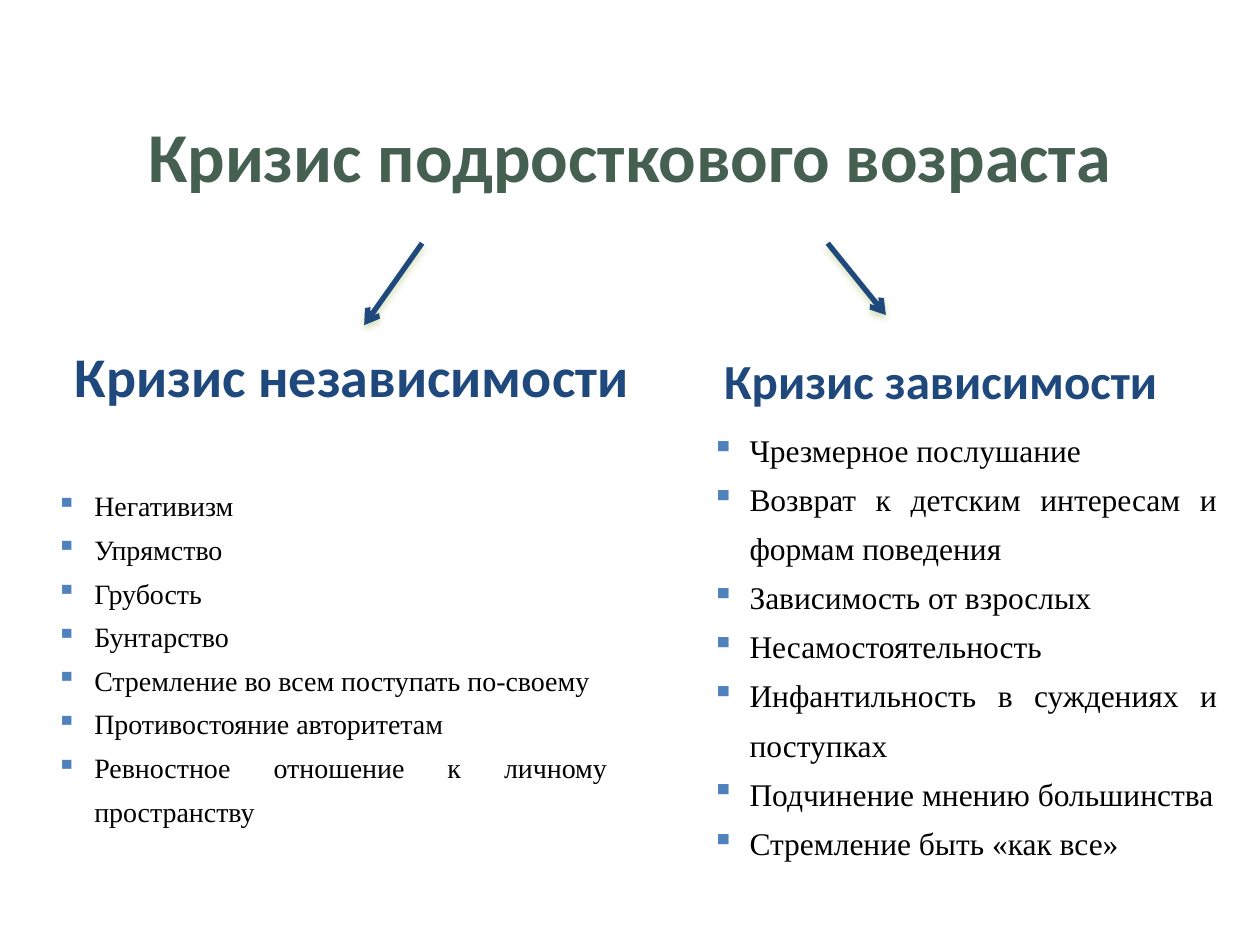
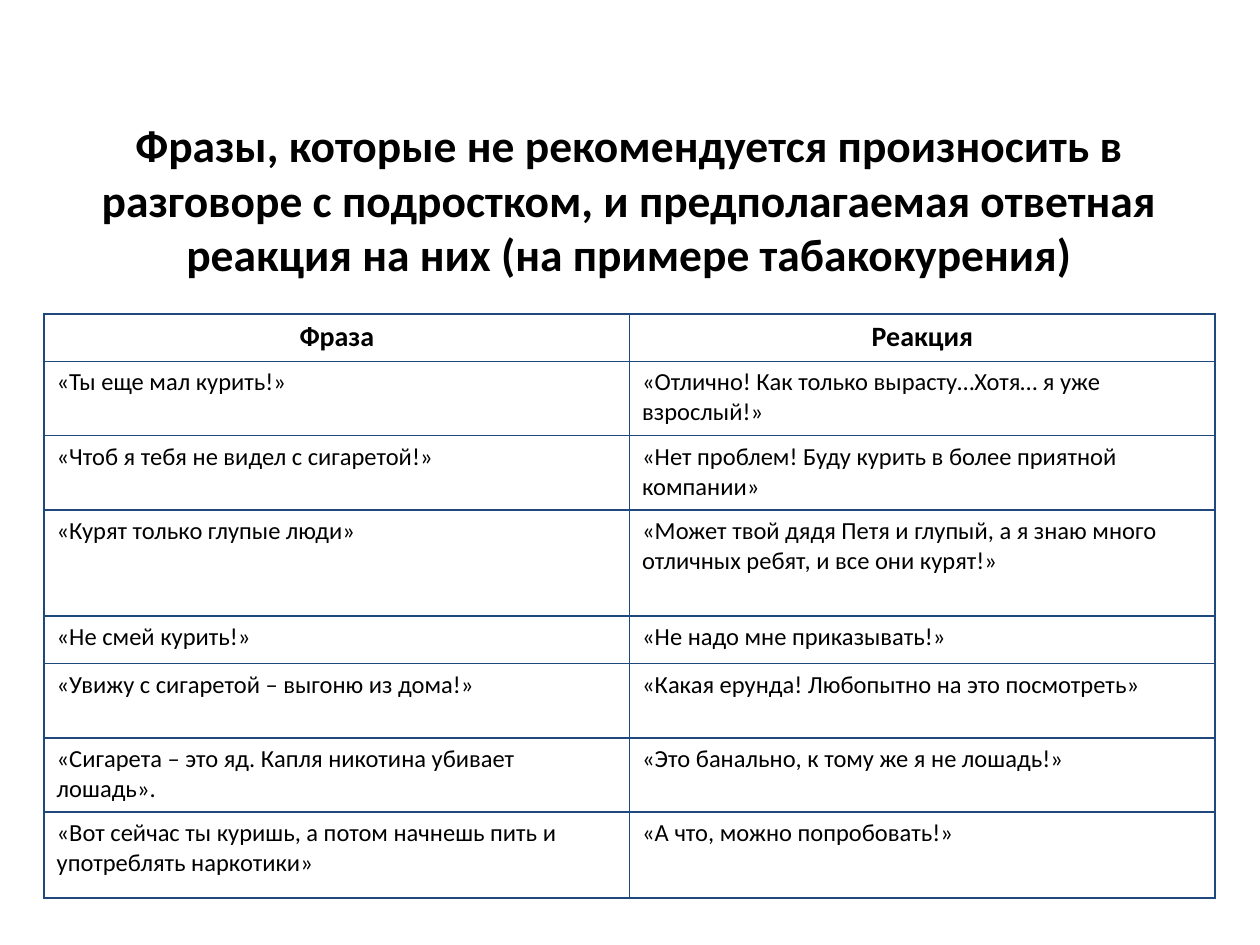
from dataclasses import dataclass

import pptx
import pptx.dml.color
import pptx.enum.shapes
import pptx.enum.text
import pptx.oxml.ns
import pptx.slide
import pptx.table
import pptx.text.text
import pptx.util
from lxml import etree

Pt = pptx.util.Pt
Align = pptx.enum.text.PP_ALIGN
Anchor = pptx.enum.text.MSO_ANCHOR
qn = pptx.oxml.ns.qn


@dataclass(frozen=True)
class Theme:
    navy: str = "1F497D"
    green: str = "455F51"
    black: str = "000000"
    bullet: str = "4F81BD"
    glow: str = "9BBB59"
    heading_font: str = "Calibri"
    list_font: str = "Times New Roman"
    crisis_title: float = 40
    phrases_title: float = 26
    table_header: float = 16
    table_body: float = 14
    arrow_width: float = 3
    border_width: float = 1


THEME = Theme()
MARGIN = 25.2
CONTENT_WIDTH = 669.2
LIST_INDENT = 21.6
LIST_SPACING = 1.3


@dataclass(frozen=True)
class Box:
    left: float
    top: float
    width: float
    height: float


@dataclass(frozen=True)
class Heading:
    text: str
    box: Box
    size: float
    color: str
    anchor: Anchor = Anchor.TOP
    space_before: float = 0
    indent: float = 0


@dataclass(frozen=True)
class Arrow:
    start: tuple[float, float]
    end: tuple[float, float]


@dataclass(frozen=True)
class SignList:
    box: Box
    size: float
    signs: tuple[str, ...]


@dataclass(frozen=True)
class Exchange:
    phrase: str
    reaction: str
    height: float


CRISIS_HEADINGS = (
    Heading("Кризис подросткового возраста", Box(MARGIN, 54.7, CONTENT_WIDTH, 67),
            THEME.crisis_title, THEME.green, Anchor.MIDDLE),
    Heading("Кризис независимости", Box(33.8, 191.5, 334.8, 53.3), 32, THEME.navy,
            space_before=2),
    Heading("Кризис зависимости", Box(365.8, 196.6, 334.8, 53.3), 28, THEME.navy,
            space_before=3, indent=8.6),
)
CRISIS_ARROWS = (
    Arrow((241.2, 139), (208.1, 185.8)),
    Arrow((473, 139), (506.2, 180)),
)
CRISIS_SIGNS = (
    SignList(Box(MARGIN, 270, 329, 221), 16, (
        "Негативизм",
        "Упрямство",
        "Грубость",
        "Бунтарство",
        "Стремление во всем поступать по-своему",
        "Противостояние авторитетам",
        "Ревностное отношение к личному пространству",
    )),
    SignList(Box(399.6, 236.2, 303.1, 267.1), 18, (
        "Чрезмерное послушание",
        "Возврат к детским интересам и формам поведения",
        "Зависимость от взрослых",
        "Несамостоятельность",
        "Инфантильность в суждениях и поступках",
        "Подчинение мнению большинства",
        "Стремление быть «как все»",
    )),
)

PHRASES_HEADING = Heading(
    "Фразы, которые не рекомендуется произносить в разговоре с подростком, "
    "и предполагаемая ответная реакция на них (на примере табакокурения)",
    Box(MARGIN, 60.5, CONTENT_WIDTH, 106.6), THEME.phrases_title, THEME.black, Anchor.MIDDLE)
ONE_LINE, TWO_LINES = 27.2, 42.5
EXCHANGES = (
    Exchange("Фраза", "Реакция", ONE_LINE),
    Exchange("«Ты еще мал курить!»",
             "«Отлично! Как только вырасту…Хотя… я уже взрослый!»", TWO_LINES),
    Exchange("«Чтоб я тебя не видел с сигаретой!»",
             "«Нет проблем! Буду курить в более приятной компании»", TWO_LINES),
    Exchange("«Курят только глупые люди»",
             "«Может твой дядя Петя и глупый, а я знаю много отличных ребят, "
             "и все они курят!»", 60.5),
    Exchange("«Не смей курить!»", "«Не надо мне приказывать!»", ONE_LINE),
    Exchange("«Увижу с сигаретой – выгоню из дома!»",
             "«Какая ерунда! Любопытно на это посмотреть»", TWO_LINES),
    Exchange("«Сигарета – это яд. Капля никотина убивает лошадь».",
             "«Это банально, к тому же я не лошадь!»", TWO_LINES),
    Exchange("«Вот сейчас ты куришь, а потом начнешь пить и употреблять наркотики»",
             "«А что, можно попробовать!»", 49),
)


def rgb(color: str) -> pptx.dml.color.RGBColor:
    return pptx.dml.color.RGBColor.from_string(color)


def add_node(parent: etree.ElementBase, tag: str, **attributes: str) -> etree.ElementBase:
    return etree.SubElement(parent, qn(tag), attributes)


def style(paragraph: pptx.text.text._Paragraph, font: str, size: float, color: str,
          align: Align, bold: bool = False) -> None:
    paragraph.alignment = align
    paragraph.font.name = font
    paragraph.font.size = Pt(size)
    paragraph.font.bold = bold
    paragraph.font.color.rgb = rgb(color)


def add_frame(slide: pptx.slide.Slide, box: Box) -> pptx.text.text.TextFrame:
    frame = slide.shapes.add_textbox(
        Pt(box.left), Pt(box.top), Pt(box.width), Pt(box.height)).text_frame
    frame.word_wrap = True
    return frame


def draw_heading(slide: pptx.slide.Slide, heading: Heading) -> None:
    frame = add_frame(slide, heading.box)
    frame.vertical_anchor = heading.anchor
    paragraph = frame.paragraphs[0]
    paragraph.text = heading.text
    style(paragraph, THEME.heading_font, heading.size, heading.color, Align.CENTER, True)
    paragraph.space_before = Pt(heading.space_before)
    paragraph._p.get_or_add_pPr().set("marL", str(Pt(heading.indent)))


def draw_signs(slide: pptx.slide.Slide, sign_list: SignList) -> None:
    frame = add_frame(slide, sign_list.box)
    for index, sign in enumerate(sign_list.signs):
        paragraph = frame.add_paragraph() if index else frame.paragraphs[0]
        paragraph.text = sign
        paragraph.line_spacing = LIST_SPACING
        properties = paragraph._p.get_or_add_pPr()
        properties.set("marL", str(Pt(LIST_INDENT)))
        properties.set("indent", str(-Pt(LIST_INDENT)))
        add_node(add_node(properties, "a:buClr"), "a:srgbClr", val=THEME.bullet)
        add_node(properties, "a:buChar", char="▪")
        style(paragraph, THEME.list_font, sign_list.size, THEME.black, Align.JUSTIFY)


def draw_arrow(slide: pptx.slide.Slide, arrow: Arrow) -> None:
    connector = slide.shapes.add_connector(
        pptx.enum.shapes.MSO_CONNECTOR.STRAIGHT,
        *(Pt(length) for length in arrow.start + arrow.end))
    connector.line.color.rgb = rgb(THEME.navy)
    connector.line.width = Pt(THEME.arrow_width)
    add_node(connector.line._get_or_add_ln(), "a:tailEnd", type="arrow")
    shadow = add_node(add_node(connector._element.spPr, "a:effectLst"), "a:outerShdw",
                      blurRad=str(Pt(4)), dist=str(Pt(2)), dir="5400000", rotWithShape="0")
    add_node(add_node(shadow, "a:srgbClr", val=THEME.glow), "a:alpha", val="45000")


def draw_borders(cell: pptx.table._Cell) -> None:
    properties = cell._tc.get_or_add_tcPr()
    for side in ("a:lnL", "a:lnR", "a:lnT", "a:lnB"):
        border = add_node(properties, side, w=str(Pt(THEME.border_width)))
        add_node(add_node(border, "a:solidFill"), "a:srgbClr", val=THEME.navy)


def draw_exchanges(slide: pptx.slide.Slide, exchanges: tuple[Exchange, ...]) -> None:
    height = sum(exchange.height for exchange in exchanges)
    table = slide.shapes.add_table(
        len(exchanges), 2, Pt(MARGIN), Pt(179.3), Pt(CONTENT_WIDTH), Pt(height)).table
    table.horz_banding = False
    for index, exchange in enumerate(exchanges):
        table.rows[index].height = Pt(exchange.height)
        header = index == 0
        for cell, text in zip(table.rows[index].cells, (exchange.phrase, exchange.reaction)):
            cell.text = text
            style(cell.text_frame.paragraphs[0], THEME.heading_font,
                  THEME.table_header if header else THEME.table_body, THEME.black,
                  Align.CENTER if header else Align.LEFT, header)
            draw_borders(cell)
            cell.fill.background()


def main() -> None:
    presentation = pptx.Presentation()
    presentation.slide_width, presentation.slide_height = Pt(720), Pt(540)
    blank = presentation.slide_layouts[6]

    crisis = presentation.slides.add_slide(blank)
    for heading in CRISIS_HEADINGS:
        draw_heading(crisis, heading)
    for arrow in CRISIS_ARROWS:
        draw_arrow(crisis, arrow)
    for sign_list in CRISIS_SIGNS:
        draw_signs(crisis, sign_list)

    phrases = presentation.slides.add_slide(blank)
    draw_heading(phrases, PHRASES_HEADING)
    draw_exchanges(phrases, EXCHANGES)

    presentation.save("out.pptx")


if __name__ == "__main__":
    main()
